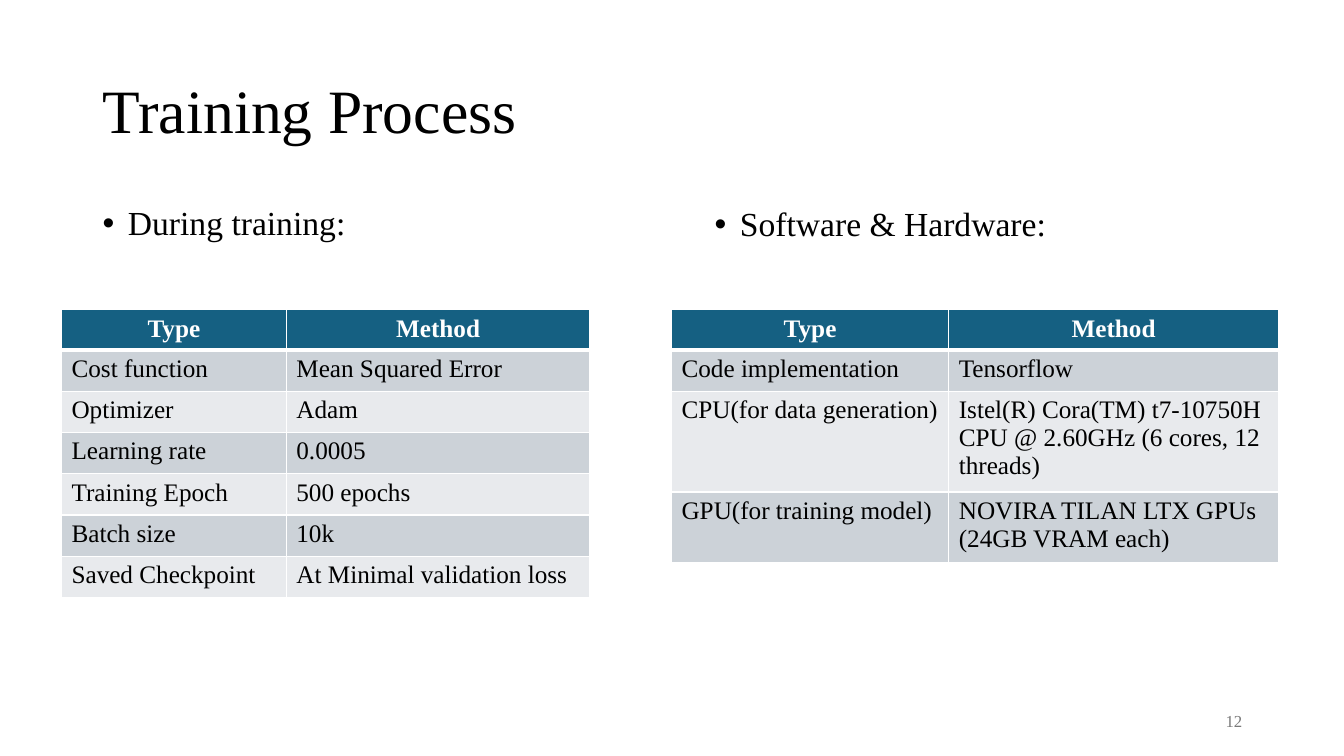
from lxml import etree
from pptx import Presentation
from pptx.dml.color import RGBColor
from pptx.enum.text import MSO_ANCHOR, PP_ALIGN
from pptx.oxml.ns import qn
from pptx.util import Inches, Pt

LEFT, CENTER, RIGHT = PP_ALIGN.LEFT, PP_ALIGN.CENTER, PP_ALIGN.RIGHT
TOP, MIDDLE = MSO_ANCHOR.TOP, MSO_ANCHOR.MIDDLE

FONT = "Times New Roman"
COLORS = {"text": "000000", "white": "FFFFFF", "header": "156082",
          "odd": "CCD2D8", "even": "E8EAED", "number": "797979"}
TITLE = "Training Process"
PAGE = "12"
HEADER = ("Type", "Method")
SECTIONS = [
    {"heading": "During training:", "heading_at": (0.92, 2), "table_x": 0.61,
     "widths": (2.23, 3.01), "heights": (0.41,) * 6,
     "rows": [("Cost function", "Mean Squared Error"),
              ("Optimizer", "Adam"),
              ("Learning rate", "0.0005"),
              ("Training Epoch", "500 epochs"),
              ("Batch size", "10k"),
              ("Saved Checkpoint", "At Minimal validation loss")]},
    {"heading": "Software & Hardware:", "heading_at": (6.99, 2.01), "table_x": 6.66,
     "widths": (2.75, 3.27), "heights": (0.41, 0.93, 0.65),
     "rows": [("Code implementation", "Tensorflow"),
              ("CPU(for data generation)",
               "Istel(R) Cora(TM) t7-10750H CPU @ 2.60GHz (6 cores, 12 threads)"),
              ("GPU(for training model)",
               "NOVIRA TILAN LTX GPUs (24GB VRAM each)")]},
]
TABLE_Y, HEADER_H = 3.07, 0.37


def write(tf, text, size, color="text", align=LEFT, bold=False):
    p = tf.paragraphs[0]
    p.alignment = align
    r = p.add_run()
    r.text = text
    r.font.name = FONT
    r.font.size = Pt(size)
    r.font.bold = bold
    r.font.color.rgb = RGBColor.from_string(COLORS[color])
    return p


def add_text(s, box, text, size, color="text", align=LEFT, anchor=TOP):
    sp = s.shapes.add_textbox(*map(Inches, box))
    tf = sp.text_frame
    tf.word_wrap = True
    tf.vertical_anchor = anchor
    return write(tf, text, size, color, align)


def add_bullet(p):
    p.line_spacing = 0.9
    p.space_before = Pt(10)
    pPr = p._p.get_or_add_pPr()
    pPr.set("marL", str(Inches(0.25)))
    pPr.set("indent", str(Inches(-0.25)))
    etree.SubElement(pPr, qn("a:buFont")).set("typeface", "Arial")
    etree.SubElement(pPr, qn("a:buChar")).set("char", "•")


def set_borders(cell, bottom):
    tcPr = cell._tc.get_or_add_tcPr()
    for i, (side, width) in enumerate((("L", 1), ("R", 1), ("T", 1), ("B", bottom))):
        ln = etree.Element(qn(f"a:ln{side}"), w=str(Pt(width)))
        fill = etree.SubElement(ln, qn("a:solidFill"))
        etree.SubElement(fill, qn("a:srgbClr")).set("val", COLORS["white"])
        tcPr.insert(i, ln)


def add_table(s, section):
    rows = [HEADER] + section["rows"]
    heights = (HEADER_H,) + section["heights"]
    widths = section["widths"]
    box = section["table_x"], TABLE_Y, sum(widths), sum(heights)
    table = s.shapes.add_table(len(rows), len(widths), *map(Inches, box)).table
    for column, width in zip(table.columns, widths):
        column.width = Inches(width)
    for i, (values, height) in enumerate(zip(rows, heights)):
        table.rows[i].height = Inches(height)
        header = i == 0
        fill = "header" if header else "odd" if i % 2 else "even"
        for j, value in enumerate(values):
            cell = table.cell(i, j)
            cell.fill.solid()
            cell.fill.fore_color.rgb = RGBColor.from_string(COLORS[fill])
            set_borders(cell, 3 if header else 1)
            write(cell.text_frame, value, 18, "white" if header else "text",
                  CENTER if header else LEFT, header)
            if i == 1:
                cell._tc.tcPr.find(qn("a:lnT")).set("w", str(Pt(3)))


prs = Presentation()
prs.slide_width, prs.slide_height = Inches(13.33), Inches(7.5)
s = prs.slides.add_slide(prs.slide_layouts[5])

title = s.shapes.title
title.left, title.top, title.width, title.height = map(Inches, (0.92, 0.4, 11.5, 1.45))
title.text_frame.vertical_anchor = MIDDLE
write(title.text_frame, TITLE, 44).line_spacing = 0.9

for section in SECTIONS:
    add_bullet(add_text(s, (*section["heading_at"], 5.75, 4.76), section["heading"], 24))
for section in SECTIONS:
    add_table(s, section)

add_text(s, (9.42, 6.95, 3, 0.4), PAGE, 12, "number", RIGHT, MIDDLE)
prs.save("out.pptx")
